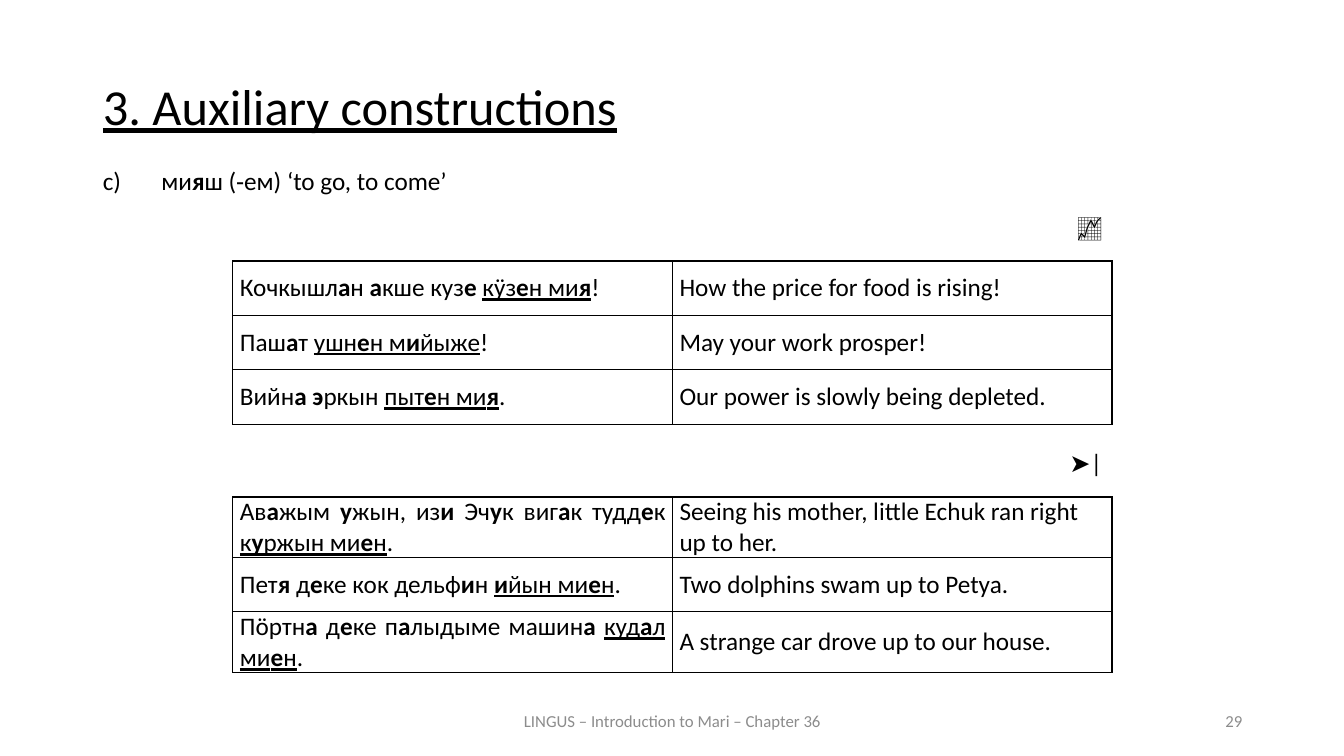
from lxml import etree
from pptx import Presentation
from pptx.dml.color import RGBColor
from pptx.enum.text import MSO_ANCHOR, MSO_AUTO_SIZE, PP_ALIGN
from pptx.oxml.ns import qn
from pptx.util import Inches, Pt

BLACK = RGBColor(0x00, 0x00, 0x00)
GRAY = RGBColor(0x8C, 0x8C, 0x8C)
LEFT, RIGHT = PP_ALIGN.LEFT, PP_ALIGN.RIGHT
CENTER, JUST = PP_ALIGN.CENTER, PP_ALIGN.JUSTIFY
TOP, MIDDLE = MSO_ANCHOR.TOP, MSO_ANCHOR.MIDDLE
FIXED, GROW = MSO_AUTO_SIZE.NONE, MSO_AUTO_SIZE.SHAPE_TO_FIT_TEXT

# In texts, * switches bold and _ switches underline.
PRICES = [
    ("Кочкышл*а*н *а*кше куз*е *_кӱз*е*н ми*я*_!", "How the price for food is rising!"),
    ("Паш*а*т _ушн*е*н м*и*йыже_!", "May your work prosper!"),
    ("Вийн*а э*ркын _пыт*е*н ми*я*_.", "Our power is slowly being depleted."),
]
MOVES = [
    ("Ав*а*жым *у*жын, из*и* Эч*у*к виг*а*к тудд*е*к _к*у*ржын ми*е*н_.",
     "Seeing his mother, little Echuk ran right up to her."),
    ("Пет*я* д*е*ке кок дельф*и*н _*и*йын ми*е*н_.", "Two dolphins swam up to Petya."),
    ("Пӧртн*а* д*е*ке п*а*лыдыме машин*а *_куд*а*л ми*е*н_.",
     "A strange car drove up to our house."),
]


class Page:
    def __init__(self, slide, font="Calibri"):
        self.slide = slide
        self.font = font

    def fill_text(self, frame, text, size=18, color=BLACK, align=LEFT, under=False):
        """Fill the first paragraph with runs split at the style marks."""
        para = frame.paragraphs[0]
        para.alignment = align
        bold = False
        for i, part in enumerate(text.split("_")):
            for j, piece in enumerate(part.split("*")):
                if j:
                    bold = not bold
                if piece:
                    run = para.add_run()
                    run.text = piece
                    run.font.name = self.font
                    run.font.size = Pt(size)
                    run.font.color.rgb = color
                    run.font.bold = bold
                    run.font.underline = under or i % 2 == 1
        return para

    def place(self, shape, box, text, anchor=TOP, fit=FIXED, **style):
        shape.left, shape.top, shape.width, shape.height = map(Inches, box)
        frame = shape.text_frame
        frame.word_wrap = True
        frame.auto_size = fit
        frame.vertical_anchor = anchor
        return self.fill_text(frame, text, **style)

    def title(self, box, text):
        para = self.place(self.slide.shapes.title, box, text,
                          size=36, align=JUST, under=True)
        para.line_spacing = 0.9

    def item(self, box, text):
        """Put a lettered line with a hanging indent in the body."""
        para = self.place(self.slide.placeholders[1], box, text)
        para.space_before = Pt(0)
        props = para._p.get_or_add_pPr()
        props.set("marL", str(Inches(0.58)))
        props.set("indent", str(-Inches(0.58)))
        etree.SubElement(props, qn("a:buNone"))

    def label(self, box, text, **style):
        self.place(self.slide.shapes.add_textbox(0, 0, 0, 0), box, text, **style)

    def edge(self, cell):
        props = cell._tc.get_or_add_tcPr()
        for i, side in enumerate(("lnL", "lnR", "lnT", "lnB")):
            line = etree.Element(qn(f"a:{side}"), w=str(Pt(1)))
            fill = etree.SubElement(line, qn("a:solidFill"))
            etree.SubElement(fill, qn("a:srgbClr"), val=str(BLACK))
            props.insert(i, line)

    def table(self, top, rows, aligns):
        high = 0.54
        grid = self.slide.shapes.add_table(
            len(rows), 2, Inches(2.31), Inches(top),
            Inches(8.72), Inches(high * len(rows))).table
        grid.first_row = grid.horz_banding = False
        for r, row in enumerate(rows):
            grid.rows[r].height = Inches(high)
            for c, text in enumerate(row):
                cell = grid.cell(r, c)
                cell.fill.background()
                cell.vertical_anchor = MIDDLE
                cell.margin_left = cell.margin_right = Inches(0.07)
                cell.margin_top = cell.margin_bottom = 0
                self.edge(cell)
                self.fill_text(cell.text_frame, text, align=aligns[c])


def main():
    deck = Presentation()
    deck.slide_width, deck.slide_height = Inches(13.33), Inches(7.5)
    page = Page(deck.slides.add_slide(deck.slide_layouts[1]))
    page.title((0.92, 0.76, 11.5, 0.83), "3. Auxiliary constructions")
    page.item((0.92, 1.59, 11.08, 0.4), "c)\tми*я*ш (‑ем) ‘to go, to come’")
    page.label((9.25, 2.05, 1.78, 0.4), "📈", align=RIGHT, fit=GROW)
    page.table(2.59, PRICES, (JUST, JUST))
    page.label((9.25, 4.39, 1.78, 0.4), "➤|", align=RIGHT, fit=GROW)
    page.table(4.93, MOVES, (JUST, LEFT))
    foot = {"size": 12, "color": GRAY, "anchor": MIDDLE}
    page.label((4.42, 6.95, 4.5, 0.4), "LINGUS – Introduction to Mari – Chapter 36",
               align=CENTER, **foot)
    page.label((9.42, 6.95, 3, 0.4), "29", align=RIGHT, **foot)
    deck.save("out.pptx")


if __name__ == "__main__":
    main()
